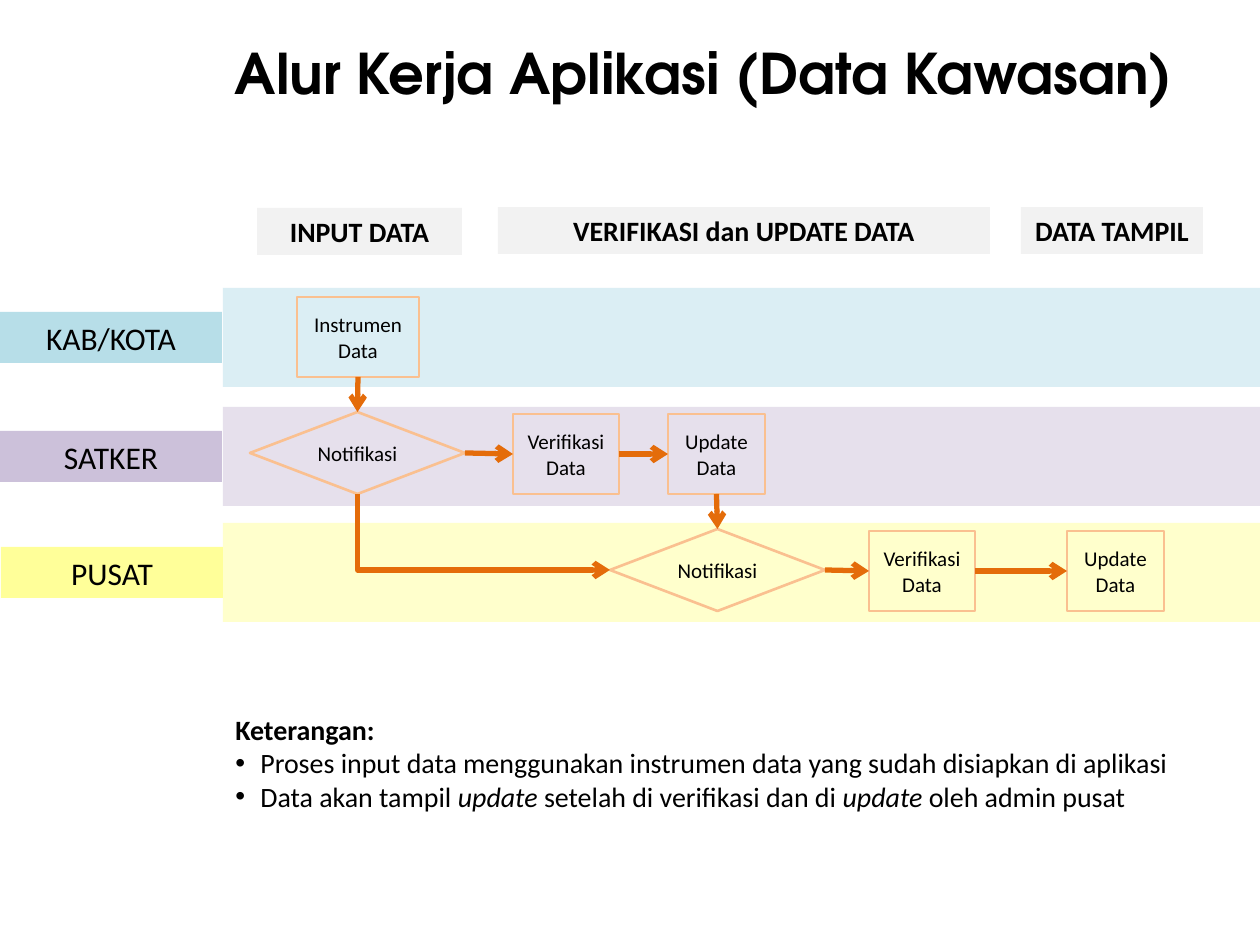
import dataclasses

import pptx
import pptx.dml.color
import pptx.enum.shapes
import pptx.enum.text
import pptx.oxml
import pptx.oxml.ns
import pptx.util

SHAPE = pptx.enum.shapes.MSO_SHAPE
LINK = pptx.enum.shapes.MSO_CONNECTOR
ALIGN = pptx.enum.text.PP_ALIGN
MIDDLE = pptx.enum.text.MSO_ANCHOR.MIDDLE
TOP, LEFT, BOTTOM, RIGHT = range(4)
NS = pptx.oxml.ns.nsdecls("a")


@dataclasses.dataclass(frozen=True)
class Theme:
    font: str = "Calibri"
    head_font: str = "TeX Gyre Adventor"
    ink: str = "000000"
    halo: str = "FEFEFE"
    edge: str = "FAC090"
    arrow: str = "E46C0A"
    head_fill: str = "F2F2F2"
    title: int = 32
    lane: int = 18
    body: int = 16
    node: int = 12
    edge_width: float = 1.5
    arrow_width: float = 3


def px(n):
    return pptx.util.Emu(round(n * 914400 / 126))


def rgb(code):
    return pptx.dml.color.RGBColor.from_string(code)


class Board:
    def __init__(self, slide, theme):
        self.slide = slide
        self.theme = theme

    def style(self, par, size, bold=False, font=None):
        for run in par.runs:
            run.font.name = font or self.theme.font
            run.font.size = pptx.util.Pt(size)
            run.font.bold = bold
            run.font.color.rgb = rgb(self.theme.ink)

    def title(self, text, x, y, w, h):
        item = self.slide.shapes.title
        item.left, item.top, item.width, item.height = map(px, (x, y, w, h))
        frame = item.text_frame
        frame.text = text
        frame.vertical_anchor = MIDDLE
        par = frame.paragraphs[0]
        par.alignment = ALIGN.LEFT
        par.line_spacing = 0.75
        self.style(par, self.theme.title, True, self.theme.head_font)
        halo = pptx.oxml.parse_xml(
            f'<a:ln {NS} w="19050"><a:solidFill>'
            f'<a:srgbClr val="{self.theme.halo}"/></a:solidFill></a:ln>')
        par.runs[0].font._element.insert(0, halo)

    def block(self, x, y, w, h, fill=None, text="", size=0, bold=False,
              kind=SHAPE.RECTANGLE):
        """Draw a filled block, or an outlined one when fill is None."""
        item = self.slide.shapes.add_shape(kind, *map(px, (x, y, w, h)))
        item.shadow.inherit = False
        if fill:
            item.fill.solid()
            item.fill.fore_color.rgb = rgb(fill)
            item.line.fill.background()
        else:
            item.fill.background()
            item.line.color.rgb = rgb(self.theme.edge)
            item.line.width = pptx.util.Pt(self.theme.edge_width)
        if text:
            frame = item.text_frame
            frame.text = text
            frame.vertical_anchor = MIDDLE
            frame.paragraphs[0].alignment = ALIGN.CENTER
            self.style(frame.paragraphs[0], size, bold)
        return item

    def node(self, x, y, w, h, text, kind=SHAPE.RECTANGLE):
        return self.block(x, y, w, h, None, text, self.theme.node, kind=kind)

    def arrow(self, start, out, end, into):
        line = self.slide.shapes.add_connector(LINK.STRAIGHT, 0, 0, 0, 0)
        line.begin_connect(start, out)
        line.end_connect(end, into)
        line.line.color.rgb = rgb(self.theme.arrow)
        line.line.width = pptx.util.Pt(self.theme.arrow_width)
        line.line._get_or_add_ln().append(
            pptx.oxml.parse_xml(f'<a:tailEnd {NS} type="arrow"/>'))
        line._element.spPr.append(pptx.oxml.parse_xml(f"<a:effectLst {NS}/>"))
        return line

    def bend(self, start, end):
        """Run an arrow down from start, then right into end."""
        line = self.arrow(start, BOTTOM, end, LEFT)
        x, y, w, h = line.left, line.top, line.width, line.height
        line.left, line.top = x + (w - h) // 2, y + (h - w) // 2
        line.width, line.height = h, w
        form = line._element.spPr
        form.find(pptx.oxml.ns.qn("a:prstGeom")).set("prst", "bentConnector2")
        place = form.find(pptx.oxml.ns.qn("a:xfrm"))
        place.set("rot", "16200000")
        place.set("flipH", "1")

    def notes(self, x, y, w, h, head, points):
        """Write a bold head and bullets; each bullet lists (text, italic)."""
        box = self.slide.shapes.add_textbox(*map(px, (x, y, w, h)))
        frame = box.text_frame
        frame.word_wrap = True
        frame.text = head
        self.style(frame.paragraphs[0], self.theme.body, True)
        for parts in points:
            par = frame.add_paragraph()
            form = par._p.get_or_add_pPr()
            form.set("marL", str(px(25)))
            form.set("indent", str(-px(25)))
            form.append(pptx.oxml.parse_xml(f'<a:buFont {NS} typeface="Arial"/>'))
            form.append(pptx.oxml.parse_xml(f'<a:buChar {NS} char="•"/>'))
            for text, slant in parts:
                run = par.add_run()
                run.text = text
                run.font.italic = slant
            self.style(par, self.theme.body)


def main():
    deck = pptx.Presentation()
    deck.slide_width, deck.slide_height = px(1260), px(945)
    theme = Theme()
    board = Board(deck.slides.add_slide(deck.slide_layouts[5]), theme)
    board.title("Alur Kerja Aplikasi (Data Kawasan)", 222, 48, 1037, 63)

    lanes = [
        ("KAB/KOTA", 0, 288, "DBEEF4", "B7DEE8"),
        ("SATKER", 0, 407, "E6E0EC", "CCC1DA"),
        ("PUSAT", 1, 523, "FFFFCC", "FFFF99"),
    ]
    for name, x, y, pale, deep in lanes:
        board.block(223, y, 1037, 99, pale)
        board.block(x, y + 24, 222, 51, deep, name, theme.lane)

    heads = [
        ("INPUT DATA", 257, 208, 205),
        ("VERIFIKASI dan UPDATE DATA", 498, 207, 492),
        ("DATA TAMPIL", 1021, 207, 182),
    ]
    for name, x, y, w in heads:
        board.block(x, y, w, 47, theme.head_fill, name, theme.body, True)

    entry = board.node(297, 297, 122, 80, "Instrumen Data")
    rows = []
    for y, notice_x, check_x, update_x in [(412, 250, 513, 668),
                                           (529, 610, 869, 1067)]:
        notice = board.node(notice_x, y, 215, 82, "Notifikasi",
                            SHAPE.FLOWCHART_DECISION)
        check = board.node(check_x, y + 2, 106, 80, "Verifikasi Data")
        update = board.node(update_x, y + 2, 97, 80, "Update Data")
        board.arrow(notice, RIGHT, check, LEFT)
        board.arrow(check, RIGHT, update, LEFT)
        rows.append((notice, update))
    (local, changed), (central, _) = rows
    board.arrow(entry, BOTTOM, local, TOP)
    board.arrow(changed, BOTTOM, central, TOP)
    board.bend(local, central)

    board.notes(223, 706, 1037, 149, "Keterangan:", [
        [("Proses input data menggunakan instrumen data yang sudah "
          "disiapkan di aplikasi", False)],
        [("Data akan tampil ", False), ("update ", True),
         ("setelah di verifikasi dan di ", False), ("update ", True),
         ("oleh admin pusat", False)],
    ])
    deck.save("out.pptx")


if __name__ == "__main__":
    main()
